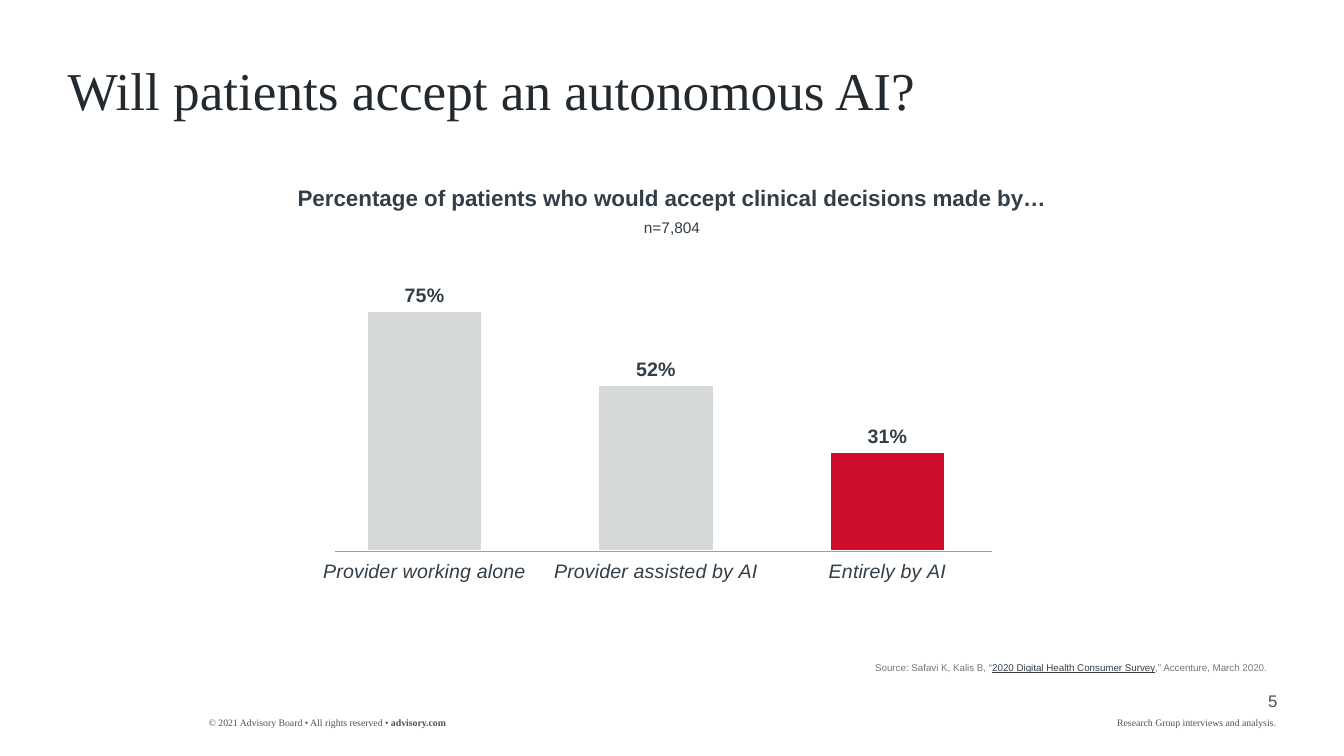
from lxml import etree
from pptx import Presentation
from pptx.chart.data import CategoryChartData
from pptx.dml.color import RGBColor
from pptx.enum.chart import XL_CHART_TYPE, XL_LABEL_POSITION, XL_TICK_LABEL_POSITION, XL_TICK_MARK
from pptx.enum.shapes import MSO_CONNECTOR
from pptx.enum.text import MSO_ANCHOR, PP_ALIGN
from pptx.oxml import parse_xml
from pptx.oxml.ns import nsdecls, qn
from pptx.util import Inches, Pt

COLUMNS = XL_CHART_TYPE.COLUMN_CLUSTERED
OUTSIDE_END = XL_LABEL_POSITION.OUTSIDE_END
LOW = XL_TICK_LABEL_POSITION.LOW
NO_TICK = XL_TICK_MARK.NONE
STRAIGHT = MSO_CONNECTOR.STRAIGHT
TOP, BOTTOM = MSO_ANCHOR.TOP, MSO_ANCHOR.BOTTOM
LEFT, CENTER, RIGHT = PP_ALIGN.LEFT, PP_ALIGN.CENTER, PP_ALIGN.RIGHT

INK = RGBColor(0x22, 0x2A, 0x30)
SLATE = RGBColor(0x32, 0x3E, 0x48)
FOOTER_GRAY = RGBColor(0x44, 0x54, 0x60)
SOURCE_GRAY = RGBColor(0x70, 0x78, 0x7E)
AXIS_GRAY = RGBColor(0x99, 0x9F, 0xA3)
BAR_GRAY = RGBColor(0xD6, 0xD9, 0xDA)
RED = RGBColor(0xCE, 0x0E, 0x2D)
WHITE = RGBColor(0xFF, 0xFF, 0xFF)

SANS, SERIF = "Arial", "Times New Roman"
TITLE = {"name": SERIF, "size": Pt(38), "color": INK}
HEADING = {"name": SANS, "size": Pt(16), "color": SLATE, "bold": True}
SAMPLE = {"name": SANS, "size": Pt(11), "color": SLATE}
SOURCE = {"name": SANS, "size": Pt(7), "color": SOURCE_GRAY}
SURVEY = {**SOURCE, "color": SLATE, "underline": True}
FOOTER = {"name": SERIF, "size": Pt(7), "color": FOOTER_GRAY}
SITE = {**FOOTER, "bold": True}
PAGE = {"name": SANS, "size": Pt(12), "color": FOOTER_GRAY}
CATEGORY = {"name": SANS, "size": Pt(14), "color": SLATE, "italic": True}
VALUE = {"name": SANS, "size": Pt(14), "color": SLATE, "bold": True}

ACCEPTANCE = {
    "Provider working alone": 0.75,
    "Provider assisted by AI": 0.52,
    "Entirely by AI": 0.31,
    "": None,
}
PLOT_BOX = {"x": 0.01, "y": 0.02, "w": 0.98, "h": 0.75}


def format_font(font, style):
    for attribute, value in style.items():
        if attribute == "color":
            font.color.rgb = value
        else:
            setattr(font, attribute, value)


def add_text(slide, box, runs, align=LEFT, anchor=TOP, spacing=1.0):
    frame = slide.shapes.add_textbox(*map(Inches, box)).text_frame
    frame.word_wrap = True
    frame.vertical_anchor = anchor
    for side in ("left", "top", "right", "bottom"):
        setattr(frame, f"margin_{side}", 0)
    paragraph = frame.paragraphs[0]
    paragraph.alignment = align
    paragraph.line_spacing = spacing
    for text, style in runs:
        run = paragraph.add_run()
        run.text = text
        format_font(run.font, style)


def add_heading(slide, box):
    left, top, width, height = box
    add_text(slide, (left, top, width, 0.27), [
        ("Percentage of patients who would accept clinical decisions made by…", HEADING),
    ], CENTER)
    add_text(slide, (left, top + height - 0.19, width, 0.19), [("n=7,804", SAMPLE)], CENTER)


def set_plot_box(chart):
    plot_area = chart.element.find(".//" + qn("c:plotArea"))
    for layout in plot_area.findall(qn("c:layout")):
        plot_area.remove(layout)
    layout = parse_xml(f"<c:layout {nsdecls('c')}><c:manualLayout/></c:layout>")
    settings = {"layoutTarget": "inner", "xMode": "edge", "yMode": "edge", **PLOT_BOX}
    for tag, value in settings.items():
        etree.SubElement(layout[0], qn(f"c:{tag}")).set("val", str(value))
    plot_area.insert(0, layout)


def add_acceptance_chart(slide, box):
    left, top, width, height = box
    data = CategoryChartData(number_format="0%")
    data.categories = list(ACCEPTANCE)
    data.add_series("Series 1", list(ACCEPTANCE.values()))
    chart = slide.shapes.add_chart(COLUMNS, *map(Inches, box), data).chart
    chart.has_legend = False
    chart.has_title = False
    format_font(chart.font, {"name": SANS, "size": Pt(14), "color": SLATE})
    set_plot_box(chart)

    categories = chart.category_axis
    categories.major_tick_mark = NO_TICK
    categories.tick_label_position = LOW
    categories.format.line.fill.background()
    format_font(categories.tick_labels.font, CATEGORY)
    scale = chart.value_axis
    scale.visible = False
    scale.has_major_gridlines = False
    scale.minimum_scale, scale.maximum_scale = 0, 0.8

    plot = chart.plots[0]
    plot.gap_width = 100
    plot.vary_by_categories = False
    bars = plot.series[0]
    for part, color in ((bars, BAR_GRAY), (bars.points[2], RED)):
        part.format.fill.solid()
        part.format.fill.fore_color.rgb = color
        part.format.line.color.rgb = WHITE
        part.format.line.width = Pt(1.5)
    labels = bars.data_labels
    labels.show_value = True
    labels.position = OUTSIDE_END
    labels.number_format = "0%"
    labels.number_format_is_linked = False
    format_font(labels.font, VALUE)

    baseline_y = top + height * (PLOT_BOX["y"] + PLOT_BOX["h"]) + 0.01
    ends = (left + 0.35, baseline_y, left + 6.87, baseline_y)
    baseline = slide.shapes.add_connector(STRAIGHT, *map(Inches, ends))
    baseline.line.color.rgb = AXIS_GRAY
    baseline.line.width = Pt(1)
    etree.SubElement(baseline.element.spPr, qn("a:effectLst"))


def add_source(slide, box):
    add_text(slide, box, [
        ("Source: Safavi K, Kalis B, “", SOURCE),
        ("2020 Digital Health Consumer Survey", SURVEY),
        (",” Accenture, March 2020.", SOURCE),
    ], anchor=BOTTOM)


def add_footer(slide, box):
    left, top, width, height = box
    right, line_top = left + width, top + height - 0.12
    add_text(slide, (left, line_top, 3.26, 0.12), [
        ("© 2021 Advisory Board • All rights reserved • ", FOOTER),
        ("advisory.com", SITE),
    ])
    add_text(slide, (right - 1.59, line_top, 1.59, 0.12), [
        ("Research Group interviews and analysis.", FOOTER),
    ])
    add_text(slide, (right - 0.5, top, 0.5, 0.2), [("5", PAGE)], RIGHT)


def main():
    deck = Presentation()
    deck.slide_width, deck.slide_height = Inches(13.33), Inches(7.5)
    slide = deck.slides.add_slide(deck.slide_layouts[6])
    add_text(slide, (0.67, 0.64, 12, 0.59),
             [("Will patients accept an autonomous AI?", TITLE)], spacing=0.9)
    add_acceptance_chart(slide, (2.97, 2.83, 9.37, 3.42))
    add_heading(slide, (2.24, 1.83, 8.85, 0.52))
    add_source(slide, (8.68, 6.56, 3.98, 0.12))
    add_footer(slide, (2.07, 6.85, 10.6, 0.38))
    deck.save("out.pptx")


if __name__ == "__main__":
    main()
